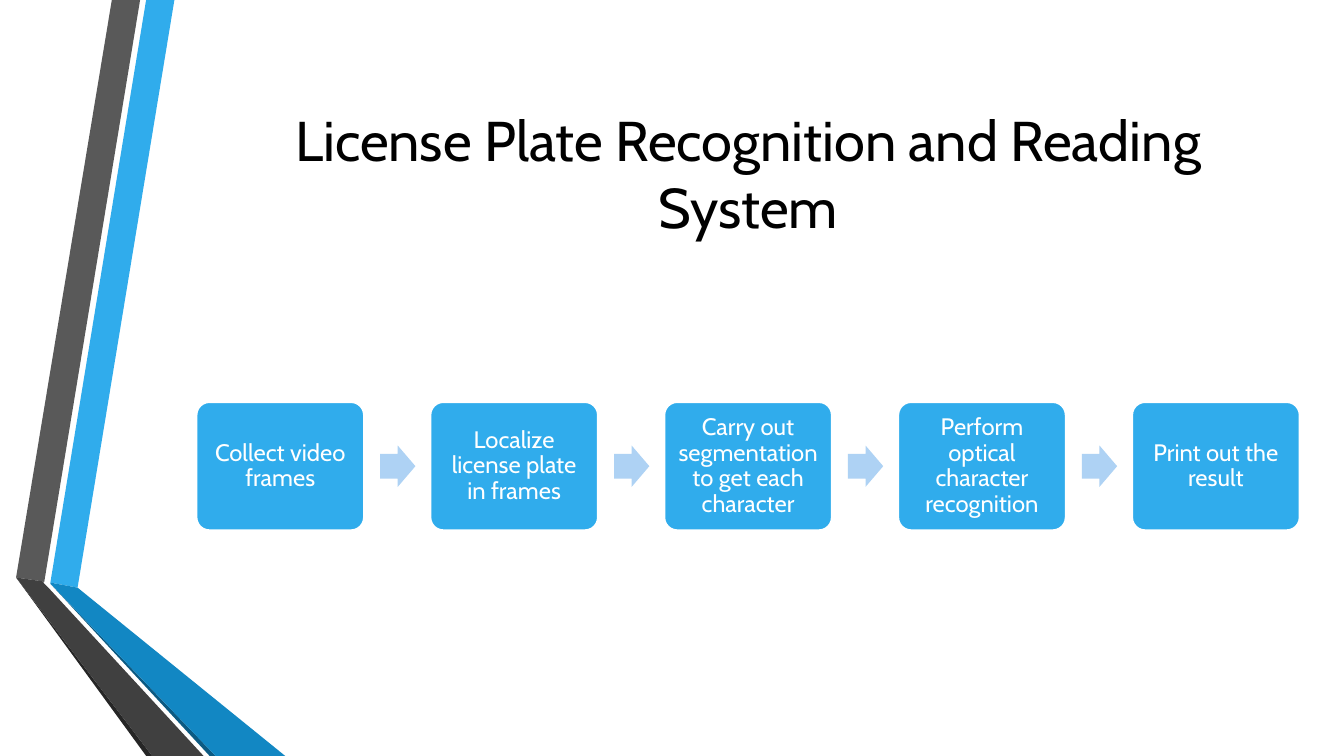
from pptx import Presentation
from pptx.dml.color import RGBColor
from pptx.enum.shapes import MSO_SHAPE
from pptx.enum.text import MSO_ANCHOR, MSO_AUTO_SIZE, PP_ALIGN
from pptx.util import Inches, Pt

ROUNDED = MSO_SHAPE.ROUNDED_RECTANGLE
ARROW = MSO_SHAPE.RIGHT_ARROW
MIDDLE = MSO_ANCHOR.MIDDLE
NO_AUTOFIT = MSO_AUTO_SIZE.NONE
CENTER = PP_ALIGN.CENTER

FONT = "Cabin"
COLORS = {
    "blue": "30ACEC", "blue_fold": "1287C3", "blue_edge": "0C5A82",
    "gray": "595959", "gray_fold": "404040", "gray_edge": "262626",
    "arrow": "AED2F4", "white": "FFFFFF", "black": "000000",
}
RIBBONS = [
    ("blue", [(0.5, 5.78), (0.77, 5.83), (1.73, 0), (1.45, 0)]),
    ("gray", [(1.39, 0), (1.11, 0), (0.16, 5.73), (0.44, 5.77)]),
    ("gray_edge", [(0.16, 5.73), (1.45, 7.5), (1.51, 7.5)]),
    ("blue_edge", [(0.5, 5.79), (2.08, 7.5), (2.14, 7.5)]),
    ("blue_fold", [(0.5, 5.79), (2.14, 7.5), (2.83, 7.5), (0.77, 5.83), (0.5, 5.78)]),
    ("gray_fold", [(2.02, 7.5), (0.48, 5.83), (0.43, 5.78), (0.44, 5.77),
                   (0.16, 5.73), (1.51, 7.5)]),
]
STEPS = [
    "Collect video frames",
    "Localize license plate in frames",
    "Carry out segmentation to get each character",
    "Perform optical character recognition",
    "Print out the result",
]
FIRST_STEP, STEP_PITCH, ARROW_OFFSET = 1.95, 2.32, 1.82


class SlideBuilder:
    """Draws styled elements on the current slide."""

    def __init__(self, slide):
        self.slide = slide

    def color(self, name):
        return RGBColor.from_string(COLORS[name])

    def paint(self, shape, fill):
        shape.shadow.inherit = False
        shape.fill.solid()
        shape.fill.fore_color.rgb = self.color(fill)
        shape.line.fill.background()

    def set_text(self, frame, text, size, color, spacing):
        frame.word_wrap = True
        frame.auto_size = NO_AUTOFIT
        frame.vertical_anchor = MIDDLE
        paragraph = frame.paragraphs[0]
        paragraph.alignment = CENTER
        paragraph.line_spacing = spacing
        run = paragraph.add_run()
        run.text = text
        run.font.name = FONT
        run.font.size = Pt(size)
        run.font.color.rgb = self.color(color)

    def title(self, text, left, top, width, height):
        title = self.slide.shapes.title
        title.left, title.top = Inches(left), Inches(top)
        title.width, title.height = Inches(width), Inches(height)
        self.set_text(title.text_frame, text, 40, "black", 1.0)

    def ribbon(self, fill, points):
        corners = [(Inches(x), Inches(y)) for x, y in points]
        outline = self.slide.shapes.build_freeform(*corners[0])
        outline.add_line_segments(corners[1:], close=True)
        self.paint(outline.convert_to_shape(), fill)

    def preset(self, kind, fill, left, top, width, height):
        shape = self.slide.shapes.add_shape(
            kind, Inches(left), Inches(top), Inches(width), Inches(height))
        self.paint(shape, fill)
        return shape

    def step(self, text, left):
        box = self.preset(ROUNDED, "blue", left, 3.99, 1.66, 1.27)
        box.adjustments[0] = 0.1
        box.line.color.rgb = self.color("white")
        box.line.width = Pt(1.25)
        frame = box.text_frame
        frame.margin_left = frame.margin_right = Inches(0.07)
        frame.margin_top = frame.margin_bottom = Inches(0.07)
        self.set_text(frame, text, 17, "white", 0.9)

    def arrow(self, left):
        arrow = self.preset(ARROW, "arrow", left, 4.42, 0.35, 0.41)
        arrow.adjustments[0] = 0.6
        arrow.adjustments[1] = 0.5


def main():
    presentation = Presentation()
    presentation.slide_width = Inches(13.33)
    presentation.slide_height = Inches(7.5)
    title_only = presentation.slide_layouts[5]
    builder = SlideBuilder(presentation.slides.add_slide(title_only))

    for fill, points in RIBBONS:
        builder.ribbon(fill, points)
    builder.title("License Plate Recognition and Reading System",
                  1.94, 0.75, 10.96, 1.92)
    for index, text in enumerate(STEPS):
        left = FIRST_STEP + index * STEP_PITCH
        builder.step(text, left)
        if index < len(STEPS) - 1:
            builder.arrow(left + ARROW_OFFSET)

    presentation.save("out.pptx")


if __name__ == "__main__":
    main()
